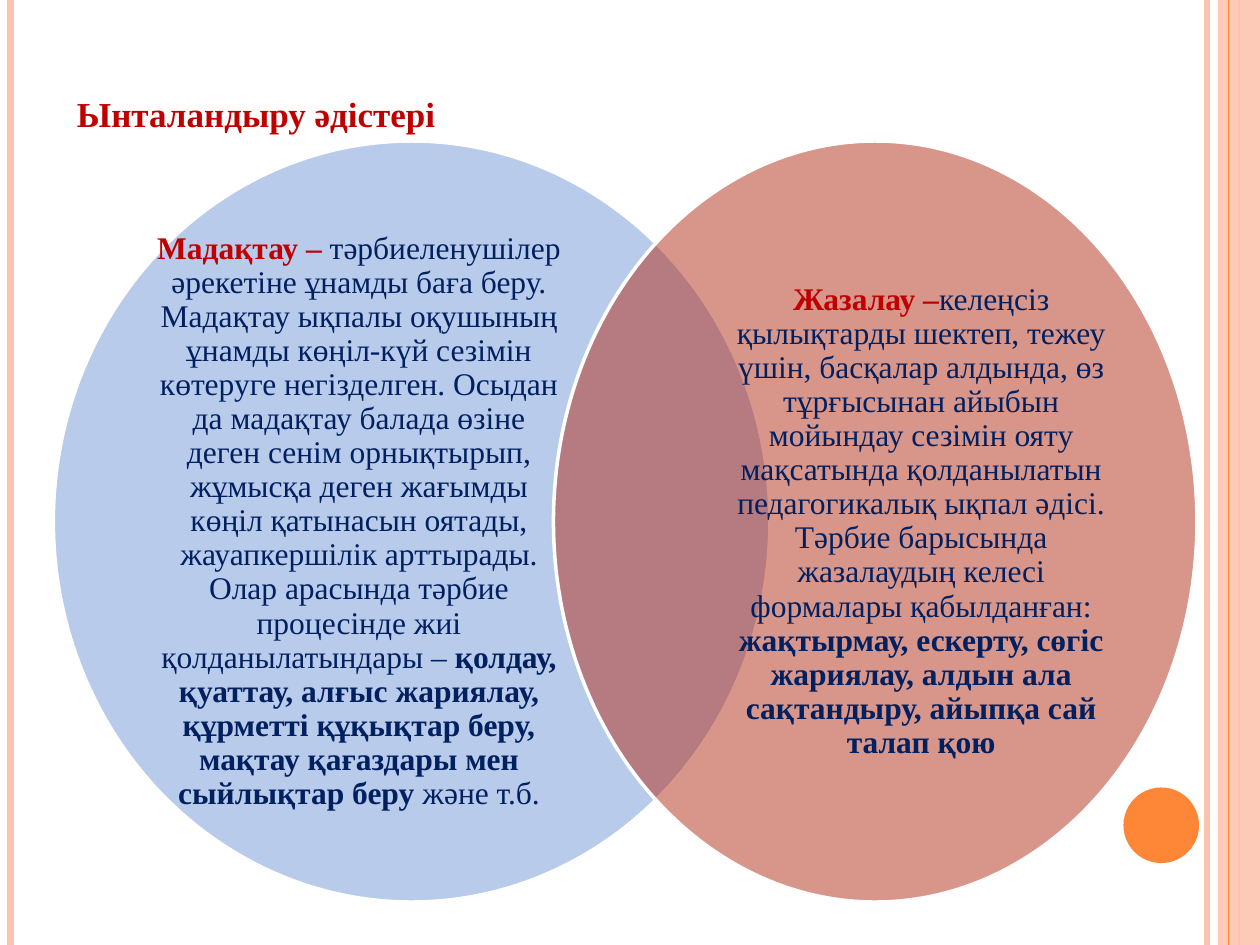
from lxml.etree import SubElement
from pptx import Presentation
from pptx.dml.color import RGBColor
from pptx.enum.shapes import MSO_CONNECTOR, MSO_SHAPE
from pptx.enum.text import MSO_ANCHOR, MSO_AUTO_SIZE, PP_ALIGN
from pptx.oxml.ns import qn
from pptx.util import Pt

COLORS = {
    "pale": "FEC3AE",
    "orange": "FE8637",
    "blue": "7598D9",
    "rust": "B32C16",
    "red": "C00000",
    "navy": "002060",
    "white": "FFFFFF",
}
WIDTH, HEIGHT = 720, 540


class Page:
    """Holds the style and the current slide; lengths are in points."""

    font = "Times New Roman"

    def __init__(self, slide):
        self.slide = slide
        self.shapes = slide.shapes

    def paint(self, item, color, alpha=100):
        item.solid()
        item.fore_color.rgb = RGBColor.from_string(COLORS[color])

    def fade(self, shape, alpha):
        for tone in shape._element.spPr.iterfind(
                f"{qn('a:solidFill')}/{qn('a:srgbClr')}"):
            SubElement(tone, qn("a:alpha"), val=str(alpha * 1000))

    def shape(self, kind, box, color, alpha=100, edge=None):
        form = self.shapes.add_shape(kind, *map(Pt, box))
        form.shadow.inherit = False
        self.paint(form.fill, color)
        if alpha < 100:
            self.fade(form, alpha)
        if edge:
            self.paint(form.line.fill, edge)
            form.line.width = Pt(2)
        else:
            form.line.fill.background()

    def stripe(self, x, color, width):
        line = self.shapes.add_connector(
            MSO_CONNECTOR.STRAIGHT, Pt(x), 0, Pt(x), Pt(HEIGHT))
        self.paint(line.line.fill, color)
        line.line.width = Pt(width)
        SubElement(line._element.spPr, qn("a:effectLst"))

    def style(self, run, size, color, bold):
        run.font.name = self.font
        run.font.size = Pt(size)
        run.font.bold = bold
        run.font.color.rgb = RGBColor.from_string(COLORS[color])

    def title(self, text, box):
        head = self.shapes.title
        head.left, head.top, head.width, head.height = map(Pt, box)
        frame = head.text_frame
        frame.text = text
        frame.word_wrap = False
        frame.auto_size = MSO_AUTO_SIZE.NONE
        frame.vertical_anchor = MSO_ANCHOR.TOP
        line = frame.paragraphs[0]
        line.alignment = PP_ALIGN.LEFT
        self.style(line.runs[0], 20, "red", True)

    def text(self, box, parts):
        frame = self.shapes.add_textbox(*map(Pt, box)).text_frame
        frame.word_wrap = True
        frame.vertical_anchor = MSO_ANCHOR.MIDDLE
        frame.margin_left = frame.margin_right = 0
        frame.margin_top = frame.margin_bottom = 0
        para = frame.paragraphs[0]
        para.alignment = PP_ALIGN.CENTER
        para.line_spacing = 0.9
        para.space_after = Pt(6.3)
        for words, color, bold in parts:
            run = para.add_run()
            run.text = words
            self.style(run, 18, color, bold)


PRAISE = [
    ("Мадақтау –", "red", True),
    (" тəрбиеленушілер əрекетіне ұнамды баға беру. Мадақтау ықпалы оқушының "
     "ұнамды көңіл-күй сезімін көтеруге негізделген. Осыдан да мадақтау балада "
     "өзіне деген сенім орнықтырып, жұмысқа деген жағымды көңіл қатынасын "
     "оятады, жауапкершілік арттырады. Олар арасында тəрбие процесінде жиі "
     "қолданылатындары – ", "navy", False),
    ("қолдау, қуаттау, алғыс жариялау, құрметті құқықтар беру, мақтау "
     "қағаздары мен сыйлықтар беру ", "navy", True),
    ("жəне т.б.", "navy", False),
]
BLAME = [
    ("Жазалау –", "red", True),
    ("келеңсіз қылықтарды шектеп, тежеу үшін, басқалар алдында, өз тұрғысынан "
     "айыбын мойындау сезімін ояту мақсатында қолданылатын педагогикалық ықпал "
     "əдісі. Тəрбие барысында жазалаудың келесі формалары қабылданған: ",
     "navy", False),
    ("жақтырмау, ескерту, сөгіс жариялау, алдын ала сақтандыру, айыпқа сай "
     "талап қою", "navy", True),
]


def main():
    deck = Presentation()
    deck.slide_width, deck.slide_height = Pt(WIDTH), Pt(HEIGHT)
    page = Page(deck.slides.add_slide(deck.slide_layouts[5]))

    # Side stripes and dot
    page.stripe(689.8, "pale", 3)
    page.stripe(6, "pale", 4.5)
    page.shape(MSO_SHAPE.RECTANGLE, (696, 0, 24, HEIGHT), "pale", 87)
    page.stripe(708, "pale", 1.5)
    page.stripe(702, "orange", 0.75)
    page.shape(MSO_SHAPE.OVAL, (642, 450, 43.2, 43.2), "orange")

    # Title
    page.title("Ынталандыру әдістері", (36.7, 49, 226, 31.7))

    # Overlapping circles: left, width, color, text left, text width, text
    for x, wide, color, left, span, parts in (
            (30.5, 409.5, "blue", 87.2, 236, PRAISE),
            (316.3, 367.7, "rust", 420.2, 212.4, BLAME)):
        page.shape(MSO_SHAPE.OVAL, (x, 80.6, wide, 434.9), color, 50, "white")
        page.text((left, 131.8, span, 332.6), parts)

    deck.save("out.pptx")


if __name__ == "__main__":
    main()
